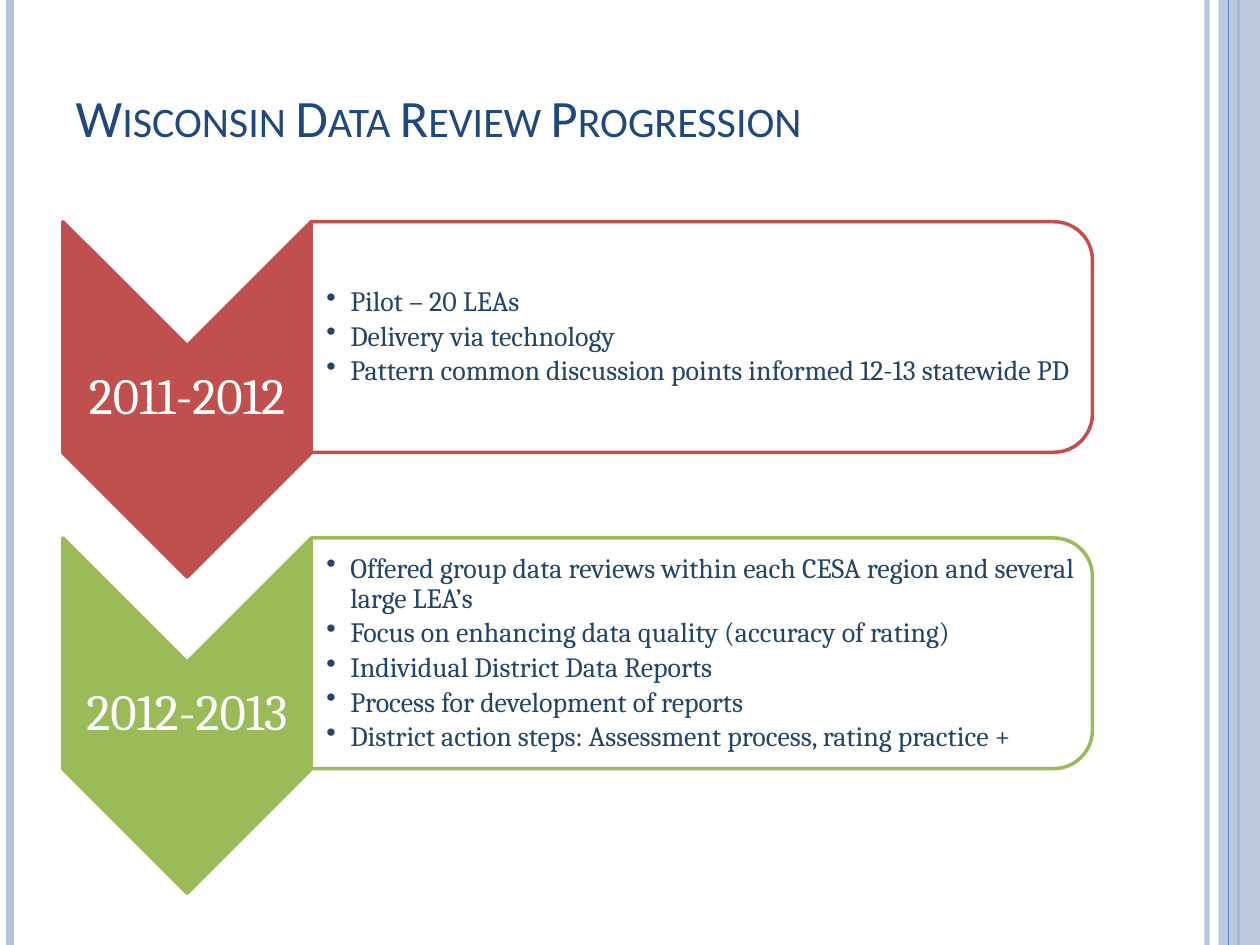
from lxml import etree
from pptx import Presentation
from pptx.dml.color import RGBColor
from pptx.enum.shapes import MSO_CONNECTOR, MSO_SHAPE
from pptx.enum.text import MSO_ANCHOR, PP_ALIGN
from pptx.oxml.ns import qn
from pptx.util import Inches, Pt

STRAIGHT = MSO_CONNECTOR.STRAIGHT
RECTANGLE = MSO_SHAPE.RECTANGLE
CHEVRON = MSO_SHAPE.CHEVRON
ROUNDED_TOP = MSO_SHAPE.ROUND_2_SAME_RECTANGLE
MIDDLE = MSO_ANCHOR.MIDDLE
LEFT = PP_ALIGN.LEFT
CENTER = PP_ALIGN.CENTER

COLORS = {
    "white": "FFFFFF",
    "pale": "B3C1DB",
    "blue": "4F81BD",
    "title": "1F497D",
    "body": "224568",
    "red": "C0504D",
    "green": "9BBB59",
}
STAGES = [
    ("2011-2012", "red", [
        "Pilot – 20 LEAs",
        "Delivery via technology",
        "Pattern common discussion points informed 12-13 statewide PD",
    ]),
    ("2012-2013", "green", [
        "Offered group data reviews within each CESA region and several large LEA’s",
        "Focus on enhancing data quality (accuracy of rating)",
        "Individual District Data Reports",
        "Process for development of reports",
        "District action steps: Assessment process, rating practice +",
    ]),
]
STAGE_TOP = 1.76
STAGE_PITCH = 2.51


def color(name):
    return RGBColor.from_string(COLORS[name])


def set_alpha(properties, percent):
    """Make the first colour found inside the given XML element transparent."""
    rgb = next(properties.iter(qn("a:srgbClr")))
    etree.SubElement(rgb, qn("a:alpha"), val=str(percent * 1000))


def add_rule(slide, x, color_name, width, alpha=100):
    """Draw a vertical line over the full height of the slide."""
    rule = slide.shapes.add_connector(
        STRAIGHT, Inches(x), Inches(0), Inches(x), Inches(7.5))
    rule.line.color.rgb = color(color_name)
    rule.line.width = Pt(width)
    properties = rule._element.spPr
    if alpha < 100:
        set_alpha(properties, alpha)
    etree.SubElement(properties, qn("a:effectLst"))


def add_filled_shape(slide, kind, left, top, width, height, fill, alpha=100, outline=None):
    shape = slide.shapes.add_shape(
        kind, Inches(left), Inches(top), Inches(width), Inches(height))
    shape.shadow.inherit = False
    shape.fill.solid()
    shape.fill.fore_color.rgb = color(fill)
    if alpha < 100:
        set_alpha(shape._element.spPr, alpha)
    if outline:
        shape.line.color.rgb = color(outline)
        shape.line.width = Pt(2)
    else:
        shape.line.fill.background()
    return shape


def add_turned_shape(slide, kind, left, top, width, height, fill, outline, alpha=100):
    """Add a shape turned by 90 degrees that covers the given area once turned."""
    shift = (width - height) / 2
    shape = add_filled_shape(
        slide, kind, left + shift, top - shift, height, width, fill, alpha, outline)
    shape.rotation = 90


def add_bullet(paragraph):
    paragraph.level = 1
    properties = paragraph._p.get_or_add_pPr()
    properties.set("marL", str(Inches(0.19)))
    properties.set("indent", str(-Inches(0.19)))
    etree.SubElement(properties, qn("a:buChar"), char="•")


def add_text(slide, left, top, width, height, lines, size, color_name,
             insets, align=LEFT, bulleted=False):
    frame = slide.shapes.add_textbox(
        Inches(left), Inches(top), Inches(width), Inches(height)).text_frame
    frame.word_wrap = True
    frame.vertical_anchor = MIDDLE
    frame.margin_left = Inches(insets[0])
    frame.margin_top = frame.margin_right = frame.margin_bottom = Inches(insets[1])
    frame.text = "\n".join(lines)
    for paragraph in frame.paragraphs:
        if bulleted:
            add_bullet(paragraph)
        paragraph.alignment = align
        paragraph.line_spacing = 0.9
        paragraph.space_after = Pt(2.5)
        for run in paragraph.runs:
            run.font.name = "Cambria"
            run.font.size = Pt(size)
            run.font.color.rgb = color(color_name)


def add_stage(slide, top, period, color_name, points):
    add_turned_shape(slide, CHEVRON, 0.5, top, 1.97, 2.82, color_name, color_name)
    add_text(slide, 0.5, top + 0.98, 1.97, 0.84, [period], 29, "white",
             (0.02, 0.02), align=CENTER)
    add_turned_shape(slide, ROUNDED_TOP, 2.47, top, 6.2, 1.83, "white", color_name, 90)
    add_text(slide, 2.47, top + 0.09, 6.11, 1.65, points, 16, "body",
             (0.12, 0.01), bulleted=True)


def add_side_bands(slide):
    add_rule(slide, 9.58, "pale", 3, 93)
    add_rule(slide, 0.08, "pale", 4.5)
    add_rule(slide, 9.83, "blue", 1.5)
    add_filled_shape(slide, RECTANGLE, 9.67, 0, 0.33, 7.5, "pale", 87)
    add_rule(slide, 9.75, "blue", 0.75)


def set_title(slide, text):
    title = slide.shapes.title
    title.left, title.top = Inches(0.5), Inches(0.3)
    title.width, title.height = Inches(8.17), Inches(1.25)
    title.text_frame.text = text
    title.text_frame.vertical_anchor = MIDDLE
    paragraph = title.text_frame.paragraphs[0]
    paragraph.alignment = LEFT
    font = paragraph.runs[0].font
    font.name = "Calibri"
    font.size = Pt(30)
    font.color.rgb = color("title")
    font._element.set("cap", "small")


def main():
    presentation = Presentation()
    presentation.slide_width = Inches(10)
    presentation.slide_height = Inches(7.5)
    slide = presentation.slides.add_slide(presentation.slide_layouts[5])
    add_side_bands(slide)
    set_title(slide, "Wisconsin Data Review Progression")
    for index, (period, color_name, points) in enumerate(STAGES):
        add_stage(slide, STAGE_TOP + index * STAGE_PITCH, period, color_name, points)
    presentation.save("out.pptx")


if __name__ == "__main__":
    main()
